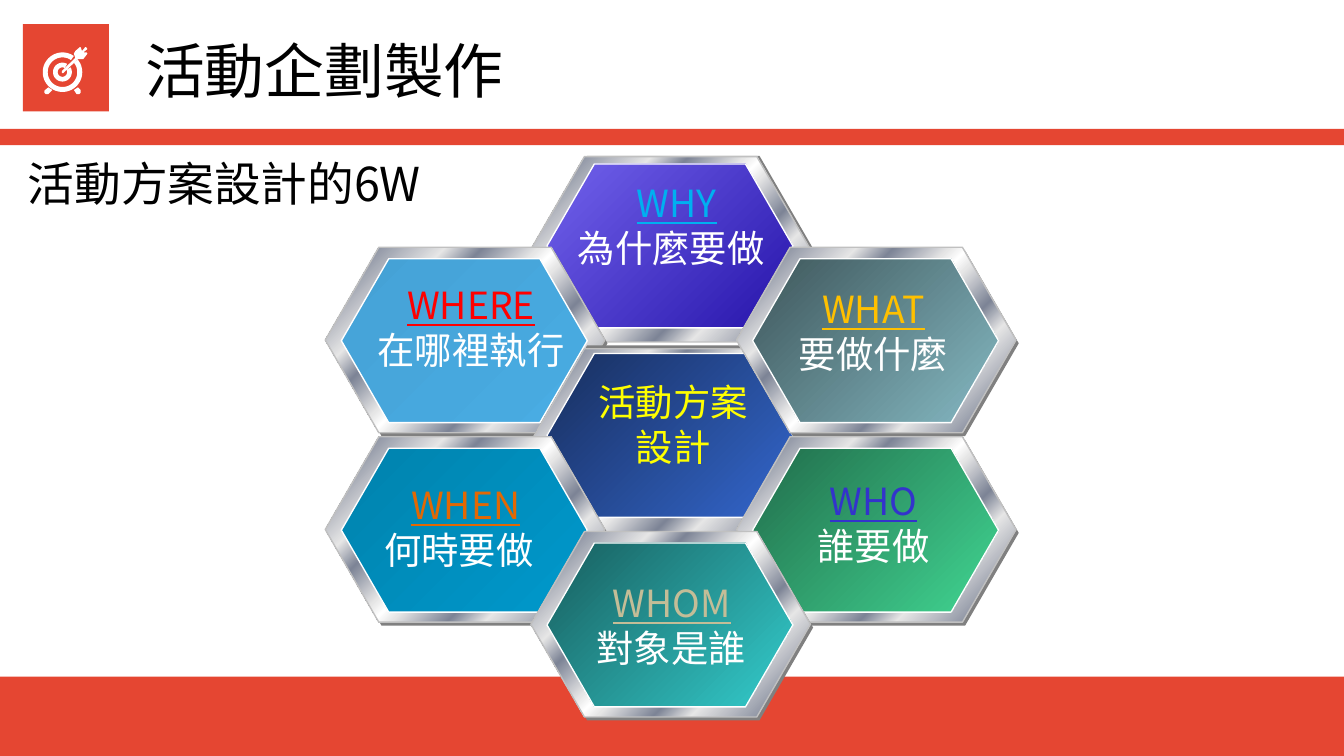
from math import cos, radians, sin

from lxml.etree import SubElement as Sub
from pptx import Presentation
from pptx.dml.color import RGBColor as RGB
from pptx.enum.shapes import MSO_SHAPE as Kind
from pptx.enum.text import MSO_ANCHOR as Anchor, MSO_AUTO_SIZE as Auto, PP_ALIGN as Align
from pptx.oxml.ns import qn
from pptx.util import Inches, Pt

WIDE, HIGH = 100, 56.25
UNIT = Inches(0.1)
FONT = "Noto Sans CJK JP"
COLORS = {
    "red": "E54632", "white": "FFFFFF", "black": "000000",
    "shade": "808080", "edge": "C0C0C0", "core": "FFFF00",
    "why": "00B0F0", "where": "FF0000", "what": "FFC000",
    "who": "3333CC", "when": "E36803", "whom": "C4BD97",
}
STEEL = [
    (0, "E6E6E6"), (8, "7D8496"), (26, "E6E6E6"), (34, "7D8496"),
    (46, "E6E6E6"), (50, "FFFFFF"), (54, "E6E6E6"), (66, "7D8496"),
    (74, "E6E6E6"), (92, "7D8496"), (100, "E6E6E6"),
]
LEFT, TOP = 25.4, 12.2
COL, ROW = 15.3, 7.05

CELLS = [
    (1, 0, 0.3, "7262EC", "2614AA", (1.3, 0.7, 16.7), ("WHY", "為什麼要做"), "why", False),
    (0, 1, 0, "45A2D6", "49ACE3", (0.75, 1.25, 17.8), ("WHERE", "在哪裡執行"), "where", True),
    (1, 2, 0.5, "182F5E", "3366CC", (2.6, 1.4, 13.6), ("活動方案", "設計"), "core", True),
    (2, 1, 0, "3E565A", "85B9C3", (2.4, 1.55, 13.2), ("WHAT", "要做什麼"), "what", True),
    (2, 3, 0, "216D4B", "41D592", (2.4, 1.75, 13.2), ("WHO", "誰要做"), "who", True),
    (0, 3, 0, "0082AD", "0099CC", (2.2, 2.05, 14.1), ("WHEN", "何時要做"), "when", False),
    (1, 4, 0, "185E5E", "33CCCC", (2.7, 2.3, 13.2), ("WHOM", "對象是誰"), "whom", False),
]

FEET = [
    [(3.6, 6.5), (3.3, 6.75), (3.3, 6.9), (3.4, 7), (3.6, 7), (3.9, 6.7)],
    [(5.8, 6.5), (5.5, 6.7), (5.7, 7), (5.9, 7), (6, 6.9), (6, 6.7)],
]
DART = [
    (5.95, 3.5), (5.6, 3.8), (5.5, 4), (5.6, 4.3), (4.6, 5.3), (4.6, 5.45),
    (4.7, 5.45), (5.8, 4.4), (6, 4.4), (6.2, 4.4), (6.5, 4), (6.45, 3.9),
    (6.2, 3.9), (6.5, 3.65), (6.45, 3.55), (6.35, 3.5), (6.1, 3.8), (6, 3.5),
]


def rgb(name):
    return RGB.from_string(COLORS[name])


def grid(*nums):
    return [round(num * UNIT) for num in nums]


def fade(shape, stops):
    shape.fill.gradient()
    shape.fill.gradient_angle = 315
    bag = next(shape._element.iter(qn("a:gsLst")))
    for stop in list(bag):
        bag.remove(stop)
    for pos, color in stops:
        stop = Sub(bag, qn("a:gs"), pos=str(pos * 1000))
        Sub(stop, qn("a:srgbClr"), val=color)


def paint(shape, fill=None, line=None, stops=None):
    shape.shadow.inherit = False
    if stops:
        fade(shape, stops)
    else:
        shape.fill.solid()
        shape.fill.fore_color.rgb = rgb(fill)
    if line:
        shape.line.color.rgb = rgb(line)
        shape.line.width = Pt(0.75)
    else:
        shape.line.fill.background()


def block(slide, box, kind=Kind.RECTANGLE, **look):
    shape = slide.shapes.add_shape(kind, *grid(*box))
    if kind == Kind.HEXAGON:
        shape.adjustments[0] = 0.289
    paint(shape, **look)


def shard(slide, dots):
    first, *rest = [grid(*dot) for dot in dots]
    pen = slide.shapes.build_freeform(*first, scale=1.0)
    pen.add_line_segments(rest, close=True)
    paint(pen.convert_to_shape(), fill="white")


def ring(slide, big, small, start, stop):
    def arc(size, turns):
        return [(4.65 + size * cos(radians(t)), 5.37 + size * sin(radians(t)))
                for t in turns]

    turns = range(start, stop + 1, 5)
    shard(slide, arc(big, turns) + arc(small, reversed(turns)))


def write(para, text, size=20, color="black", under=False, align=Align.LEFT):
    para.alignment = align
    run = para.add_run()
    run.text = text
    font = run.font
    font.name, font.size = FONT, Pt(size)
    font.color.rgb = rgb(color)
    if under:
        font.underline = True
    Sub(run._r.get_or_add_rPr(), qn("a:ea"), typeface=FONT)


def head(shape, text, size):
    frame = shape.text_frame
    frame.word_wrap, frame.auto_size = True, Auto.NONE
    frame.vertical_anchor = Anchor.MIDDLE
    frame.margin_left = frame.margin_right = UNIT
    frame.margin_top = frame.margin_bottom = UNIT
    write(frame.paragraphs[0], text, size=size)


def label(slide, box, lines, key, mid):
    frame = slide.shapes.add_textbox(*grid(*box)).text_frame
    frame.word_wrap = key not in ("what", "whom")
    frame.auto_size = Auto.SHAPE_TO_FIT_TEXT
    core = key == "core"
    write(frame.paragraphs[0], lines[0], color=key, under=not core, align=Align.CENTER)
    write(frame.add_paragraph(), lines[1], color=key if core else "white",
          align=Align.CENTER if mid else Align.LEFT)


def cell(slide, col, row, drop, dark, light, spot, lines, key, mid):
    x, y = LEFT + col * COL, TOP + row * ROW
    block(slide, (x - 1, y - 0.6, 20.8, 13.8), Kind.HEXAGON, fill="shade")
    block(slide, (x - 1.2, y - 0.85 + drop, 20.8, 13.8), Kind.HEXAGON,
          stops=STEEL, line="edge")
    block(slide, (x, y, 18.3, 12.2), Kind.HEXAGON,
          stops=[(0, dark), (100, light)], line="white")
    dx, dy, wide = spot
    label(slide, (x + dx, y + dy, wide, 7.6), lines, key, mid)


def icon(slide):
    block(slide, (1.7, 1.8, 6.4, 6.5), fill="red")
    ring(slide, 1.47, 1.1, -40, 305)
    ring(slide, 0.7, 0.35, -30, 300)
    for dots in FEET + [DART]:
        shard(slide, dots)


def main():
    deck = Presentation()
    deck.slide_width, deck.slide_height = grid(WIDE, HIGH)
    slide = deck.slides.add_slide(deck.slide_layouts[5])
    block(slide, (0, HIGH - 5.9, WIDE, 5.9), fill="red")
    block(slide, (0, 9.6, WIDE, 1.2), fill="red")
    title = slide.shapes.title
    title.left, title.top, title.width, title.height = grid(9.8, 0.3, 47.2, 9.7)
    head(title, "活動企劃製作", 32)
    icon(slide)
    head(slide.shapes.add_textbox(*grid(1.1, 10, 32.4, 7.2)), "活動方案設計的6W", 25)
    for item in CELLS:
        cell(slide, *item)
    deck.save("out.pptx")


if __name__ == "__main__":
    main()
